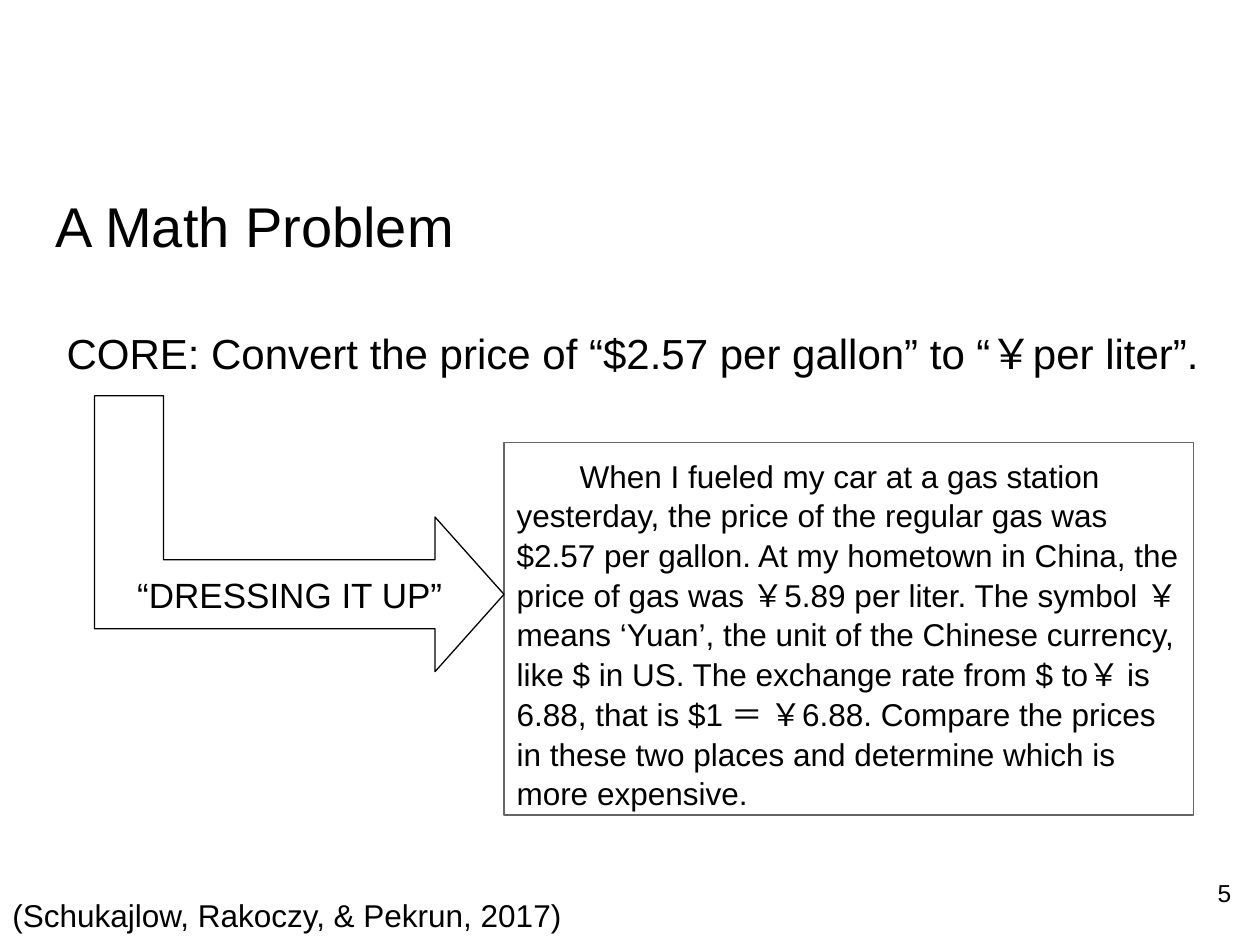
from dataclasses import dataclass

from pptx import Presentation
from pptx.dml.color import RGBColor
from pptx.enum.shapes import MSO_SHAPE as Shape
from pptx.enum.text import MSO_ANCHOR as Anchor, MSO_AUTO_SIZE as AutoSize, PP_ALIGN as Align
from pptx.oxml.xmlchemy import OxmlElement
from pptx.util import Inches, Pt


@dataclass(frozen=True)
class Theme:
    font: str = "Arial"
    ink: RGBColor = RGBColor(0x00, 0x00, 0x00)
    frame: RGBColor = RGBColor(0x66, 0x66, 0x66)
    line_width: float = 0.75
    title: int = 32
    core: int = 24
    label: int = 20
    text: int = 18
    number: int = 14


THEME = Theme()

STORY = (
    "When I fueled my car at a gas station yesterday, the price of the regular gas was "
    "$2.57 per gallon. At my hometown in China, the price of gas was ￥5.89 per liter. "
    "The symbol ￥ means ‘Yuan’, the unit of the Chinese currency, like $ in US. "
    "The exchange rate from $ to￥ is 6.88, that is $1 ＝ ￥6.88. "
    "Compare the prices in these two places and determine which is more expensive."
)


def place(shape, left, top, width, height):
    shape.left, shape.top = Inches(left), Inches(top)
    shape.width, shape.height = Inches(width), Inches(height)


def outline(shape, color):
    shape.line.color.rgb = color
    shape.line.width = Pt(THEME.line_width)


def write(shape, text, size, align=Align.LEFT, anchor=Anchor.TOP):
    """Fill a shape with one formatted paragraph and return the paragraph."""
    frame = shape.text_frame
    frame.word_wrap = True
    frame.auto_size = AutoSize.NONE
    frame.vertical_anchor = anchor
    frame.margin_left = frame.margin_right = Inches(0.1)
    frame.margin_top = frame.margin_bottom = Inches(0.1)
    paragraph = frame.paragraphs[0]
    paragraph.alignment = align
    paragraph.space_before = Pt(0)
    run = paragraph.add_run()
    run.text = text
    run.font.name = THEME.font
    run.font.size = Pt(size)
    run.font.color.rgb = THEME.ink
    return paragraph


def add_label(slide, box, text, size, **layout):
    label = slide.shapes.add_textbox(*map(Inches, box))
    return write(label, text, size, **layout)


def add_story(slide):
    """Framed word problem with an indented first line and no bullet."""
    story = slide.placeholders[1]
    place(story, 4, 3.51, 5.47, 2.96)
    outline(story, THEME.frame)
    paragraph = write(story, STORY, THEME.text)
    paragraph.line_spacing = 1.05
    paragraph.space_after = Pt(16)
    properties = paragraph._p.get_or_add_pPr()
    properties.set("marL", "0")
    properties.set("indent", str(Inches(0.5)))
    properties.append(OxmlElement("a:buNone"))


def add_bent_arrow(slide):
    arrow = slide.shapes.add_shape(Shape.BENT_UP_ARROW, *map(Inches, (1.28, 2.61, 2.19, 3.25)))
    arrow.rotation = 90
    for index, value in enumerate((0.25, 0.28, 0.25)):
        arrow.adjustments[index] = value
    arrow.shadow.inherit = False
    arrow.fill.background()
    outline(arrow, THEME.ink)


def main():
    deck = Presentation()
    deck.slide_width, deck.slide_height = Inches(10), Inches(7.5)
    slide = deck.slides.add_slide(deck.slide_layouts[1])

    # Title and word problem
    title = slide.shapes.title
    place(title, 0.34, 1.42, 9.32, 0.63)
    write(title, "A Math Problem", THEME.title)
    add_story(slide)

    # Core task
    core = add_label(slide, (0.43, 2.18, 9.43, 0.84),
                     "CORE: Convert the price of “$2.57 per gallon” to “￥per liter”.",
                     THEME.core, anchor=Anchor.MIDDLE)
    core.line_spacing = 2.0

    # Arrow from the core task to the word problem
    add_bent_arrow(slide)
    add_label(slide, (0.99, 4.45, 2.63, 0.57), "“DRESSING IT UP”", THEME.label)

    # Citation and slide number
    add_label(slide, (0, 7.01, 5.25, 0.43), "(Schukajlow, Rakoczy, & Pekrun, 2017)", THEME.text)
    add_label(slide, (9.27, 6.8, 0.6, 0.57), "5", THEME.number,
              align=Align.RIGHT, anchor=Anchor.MIDDLE)

    deck.save("out.pptx")


if __name__ == "__main__":
    main()
